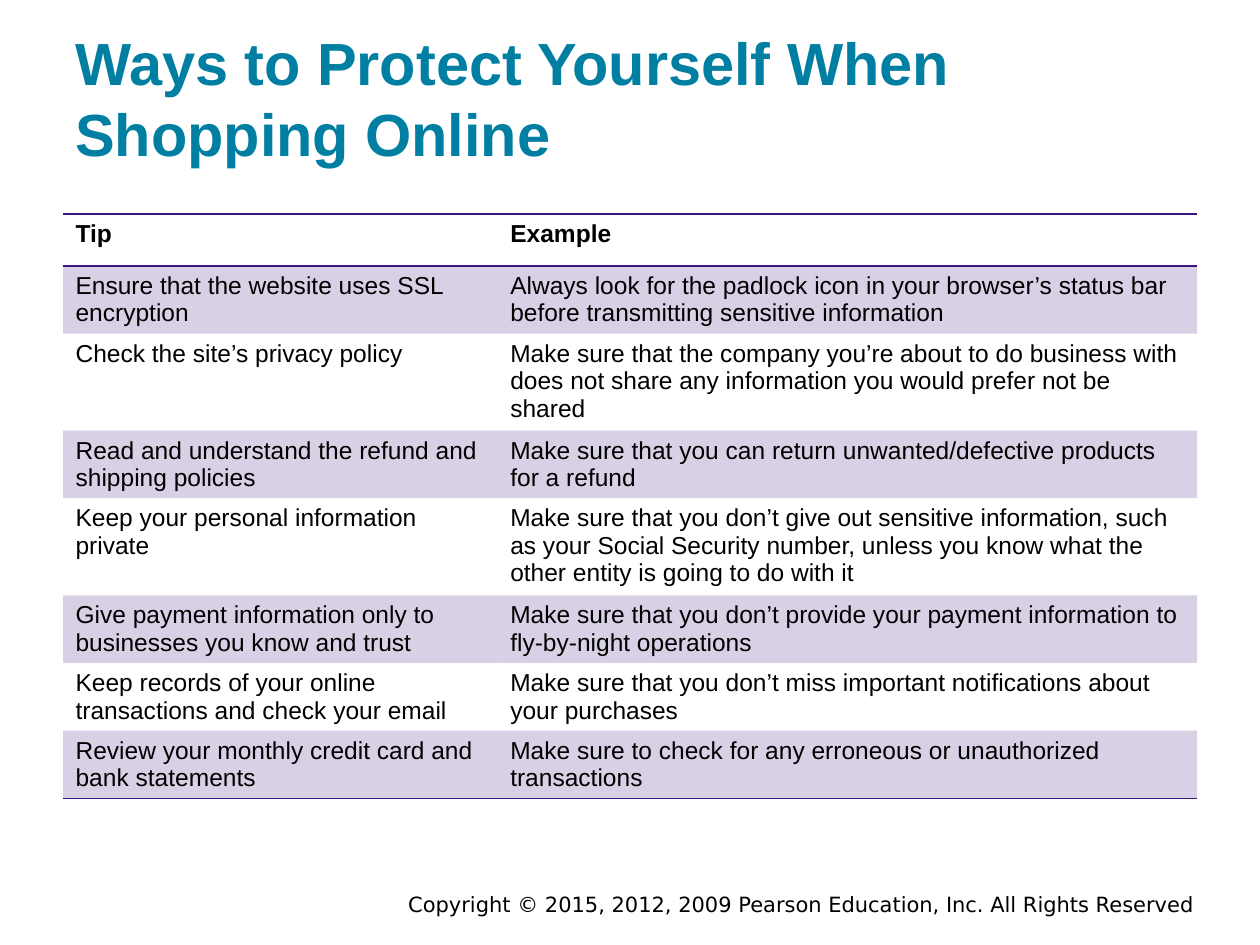
from dataclasses import dataclass

from lxml import etree
from pptx import Presentation
from pptx.dml.color import RGBColor
from pptx.enum.text import MSO_ANCHOR, PP_ALIGN
from pptx.oxml.ns import qn
from pptx.util import Inches, Pt

TOP, BOTTOM = MSO_ANCHOR.TOP, MSO_ANCHOR.BOTTOM
LEFT, RIGHT = PP_ALIGN.LEFT, PP_ALIGN.RIGHT
NO_STYLE_NO_GRID = "{2D5ABB26-0587-4C30-8999-92F81FD0307C}"


@dataclass(frozen=True)
class Theme:
    title_color: str = "007FA3"
    text_color: str = "000000"
    accent: str = "3C1581"
    band_opacity: int = 20
    body_font: str = "Arial"
    footer_font: str = "DejaVu Sans"
    title_size: int = 34
    table_size: int = 14
    footer_size: int = 12
    rule_width: int = 1


THEME = Theme()

TITLE = "Ways to Protect Yourself When Shopping Online"
COPYRIGHT = "Copyright © 2015, 2012, 2009 Pearson Education, Inc. All Rights Reserved"
COLUMN_WIDTHS = (3.45, 5.55)
ROW_HEIGHT = 0.41
CELL_BOTTOM_MARGIN = 0.02
TIPS = [
    ("Tip", "Example"),
    ("Ensure that the website uses SSL encryption",
     "Always look for the padlock icon in your browser’s status bar "
     "before transmitting sensitive information"),
    ("Check the site’s privacy policy",
     "Make sure that the company you’re about to do business with "
     "does not share any information you would prefer not be shared"),
    ("Read and understand the refund and shipping policies",
     "Make sure that you can return unwanted/defective products for a refund"),
    ("Keep your personal information private",
     "Make sure that you don’t give out sensitive information, such as your "
     "Social Security number, unless you know what the other entity is going "
     "to do with it"),
    ("Give payment information only to businesses you know and trust",
     "Make sure that you don’t provide your payment information to "
     "fly-by-night operations"),
    ("Keep records of your online transactions and check your email",
     "Make sure that you don’t miss important notifications about your purchases"),
    ("Review your monthly credit card and bank statements",
     "Make sure to check for any erroneous or unauthorized transactions"),
]


def format_text(paragraph, font_name, size, color, bold=False):
    for run in paragraph.runs:
        run.font.name = font_name
        run.font.size = Pt(size)
        run.font.bold = bold
        run.font.color.rgb = RGBColor.from_string(color)


def add_text(slide, text, box, margins, anchor, align, **style):
    frame = slide.shapes.add_textbox(*map(Inches, box)).text_frame
    frame.word_wrap = True
    frame.vertical_anchor = anchor
    frame.margin_left = frame.margin_right = Inches(margins[0])
    frame.margin_top = frame.margin_bottom = Inches(margins[1])
    frame.text = text
    paragraph = frame.paragraphs[0]
    paragraph.alignment = align
    format_text(paragraph, **style)


def shade_band(cell):
    cell.fill.solid()
    cell.fill.fore_color.rgb = RGBColor.from_string(THEME.accent)
    color = cell._tc.tcPr.find(qn("a:solidFill")).find(qn("a:srgbClr"))
    etree.SubElement(color, qn("a:alpha"), val=str(THEME.band_opacity * 1000))


def add_rule(cell, edge):
    rule = etree.Element(qn(edge), w=str(Pt(THEME.rule_width)))
    fill = etree.SubElement(rule, qn("a:solidFill"))
    etree.SubElement(fill, qn("a:srgbClr"), val=THEME.accent)
    cell._tc.get_or_add_tcPr().insert(0, rule)


def fill_cell(cell, text, row):
    cell.text = text
    cell.margin_bottom = Inches(CELL_BOTTOM_MARGIN)
    format_text(cell.text_frame.paragraphs[0], THEME.body_font,
                THEME.table_size, THEME.text_color, bold=row == 0)
    if row % 2:
        shade_band(cell)
    else:
        cell.fill.background()
    if row in (0, len(TIPS) - 1):
        add_rule(cell, "a:lnB")
    if row == 0:
        add_rule(cell, "a:lnT")


def add_tips_table(slide, left, top):
    table = slide.shapes.add_table(
        len(TIPS), len(COLUMN_WIDTHS), Inches(left), Inches(top),
        Inches(sum(COLUMN_WIDTHS)), Inches(ROW_HEIGHT * len(TIPS))).table
    table.horz_banding = False
    table._tbl.tblPr.find(qn("a:tableStyleId")).text = NO_STYLE_NO_GRID
    for column, width in zip(table.columns, COLUMN_WIDTHS):
        column.width = Inches(width)
    for row, tip in enumerate(TIPS):
        table.rows[row].height = Inches(ROW_HEIGHT)
        for column, text in enumerate(tip):
            fill_cell(table.cell(row, column), text, row)


def main():
    deck = Presentation()
    deck.slide_width, deck.slide_height = Inches(10), Inches(7.5)
    slide = deck.slides.add_slide(deck.slide_layouts[6])
    add_text(slide, COPYRIGHT, (1.75, 7.03, 7.83, 0.22), (0.1, 0.05),
             TOP, RIGHT, font_name=THEME.footer_font,
             size=THEME.footer_size, color=THEME.text_color)
    add_text(slide, TITLE, (0.5, 0.24, 9, 1.2), (0.1, 0.1),
             BOTTOM, LEFT, font_name=THEME.body_font,
             size=THEME.title_size, color=THEME.title_color, bold=True)
    add_tips_table(slide, 0.5, 1.7)
    deck.save("out.pptx")


if __name__ == "__main__":
    main()
